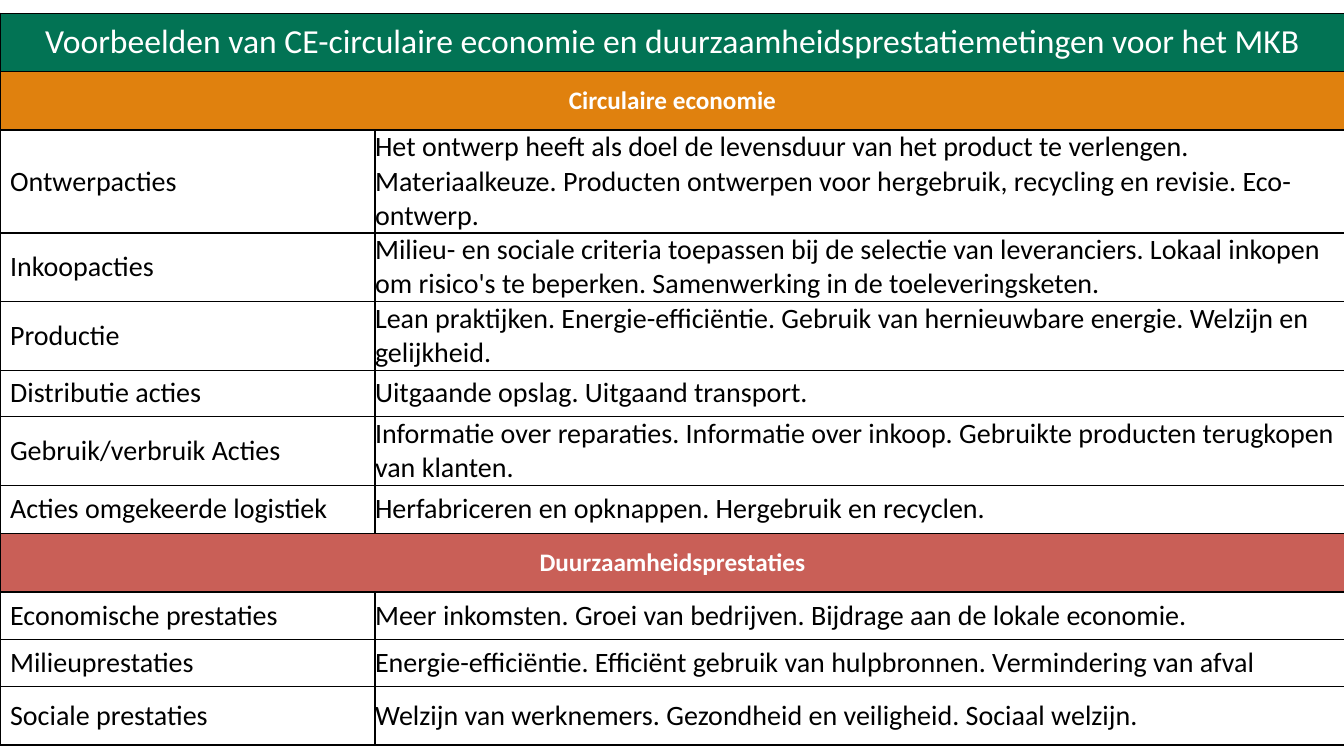
from lxml import etree
from pptx import Presentation
from pptx.dml.color import RGBColor
from pptx.enum.text import MSO_ANCHOR, PP_ALIGN
from pptx.oxml.ns import qn
from pptx.util import Inches, Pt

MIDDLE = MSO_ANCHOR.MIDDLE
LEFT, CENTER = PP_ALIGN.LEFT, PP_ALIGN.CENTER

TITLE = "Voorbeelden van CE-circulaire economie en duurzaamheidsprestatiemetingen voor het MKB"
SECTIONS = [
    ("Circulaire economie", "E0810E", [
        ("Ontwerpacties", "Het ontwerp heeft als doel de levensduur van het product te verlengen. "
         "Materiaalkeuze. Producten ontwerpen voor hergebruik, recycling en revisie. Eco-ontwerp.", 0.91),
        ("Inkoopacties", "Milieu- en sociale criteria toepassen bij de selectie van leveranciers. "
         "Lokaal inkopen om risico's te beperken. Samenwerking in de toeleveringsketen.", 0.61),
        ("Productie", "Lean praktijken. Energie-efficiëntie. Gebruik van hernieuwbare energie. "
         "Welzijn en gelijkheid.", 0.61),
        ("Distributie acties", "Uitgaande opslag. Uitgaand transport.", 0.46),
        ("Gebruik/verbruik Acties", "Informatie over reparaties. Informatie over inkoop. "
         "Gebruikte producten terugkopen van klanten.", 0.61),
        ("Acties omgekeerde logistiek", "Herfabriceren en opknappen. Hergebruik en recyclen.", 0.48),
    ]),
    ("Duurzaamheidsprestaties", "C95F57", [
        ("Economische prestaties", "Meer inkomsten. Groei van bedrijven. "
         "Bijdrage aan de lokale economie.", 0.47),
        ("Milieuprestaties", "Energie-efficiëntie. Efficiënt gebruik van hulpbronnen. "
         "Vermindering van afval", 0.47),
        ("Sociale prestaties", "Welzijn van werknemers. Gezondheid en veiligheid. Sociaal welzijn.", 0.58),
    ]),
]
COLUMNS = [3.72, 9.62]
BAND_HEIGHT = 0.58
TITLE_FONT = {"size": Pt(24), "bold": False}
SECTION_FONT = {"size": Pt(18), "bold": True}
BODY_FONT = {"size": Pt(20), "bold": False}
NO_MARGINS = dict.fromkeys(("margin_left", "margin_top", "margin_right", "margin_bottom"), 0)


def rgb(value):
    return RGBColor.from_string(value)


def set_attributes(target, values):
    for name, value in values.items():
        setattr(target, name, value)


def add_borders(cell):
    tcPr = cell._tc.get_or_add_tcPr()
    for i, side in enumerate(("lnL", "lnR", "lnT", "lnB")):
        ln = etree.Element(qn(f"a:{side}"), w=str(Pt(1)))
        fill = etree.SubElement(ln, qn("a:solidFill"))
        etree.SubElement(fill, qn("a:srgbClr"), val="000000")
        tcPr.insert(i, ln)


def fill_cell(cell, text, font, color, fill, align=LEFT, margins=None):
    set_attributes(cell, {"vertical_anchor": MIDDLE, **(margins or {})})
    cell.fill.solid()
    cell.fill.fore_color.rgb = rgb(fill)
    p = cell.text_frame.paragraphs[0]
    p.alignment = align
    r = p.add_run()
    r.text = text
    set_attributes(r.font, {"name": "Calibri", **font})
    r.font.color.rgb = rgb(color)


def main():
    rows = [(BAND_HEIGHT, TITLE, None, TITLE_FONT, "027354")]
    for heading, color, items in SECTIONS:
        rows.append((BAND_HEIGHT, heading, None, SECTION_FONT, color))
        rows += [(height, label, detail, BODY_FONT, "FFFFFF") for label, detail, height in items]

    prs = Presentation()
    prs.slide_width, prs.slide_height = Inches(13.33), Inches(7.5)
    s = prs.slides.add_slide(prs.slide_layouts[6])
    height = sum(row[0] for row in rows)
    table = s.shapes.add_table(len(rows), len(COLUMNS), 0, Inches(0.13),
                               Inches(sum(COLUMNS)), Inches(height)).table
    table.first_row = table.horz_banding = False
    for column, width in zip(table.columns, COLUMNS):
        column.width = Inches(width)

    for i, (height, label, detail, font, fill) in enumerate(rows):
        table.rows[i].height = Inches(height)
        first, second = table.cell(i, 0), table.cell(i, 1)
        if detail is None:
            first.merge(second)
            fill_cell(first, label, font, "FFFFFF", fill, CENTER)
        else:
            fill_cell(first, label, font, "000000", fill)
            fill_cell(second, detail, font, "000000", fill, margins=NO_MARGINS)
        add_borders(first)
        add_borders(second)

    prs.save("out.pptx")


if __name__ == "__main__":
    main()
